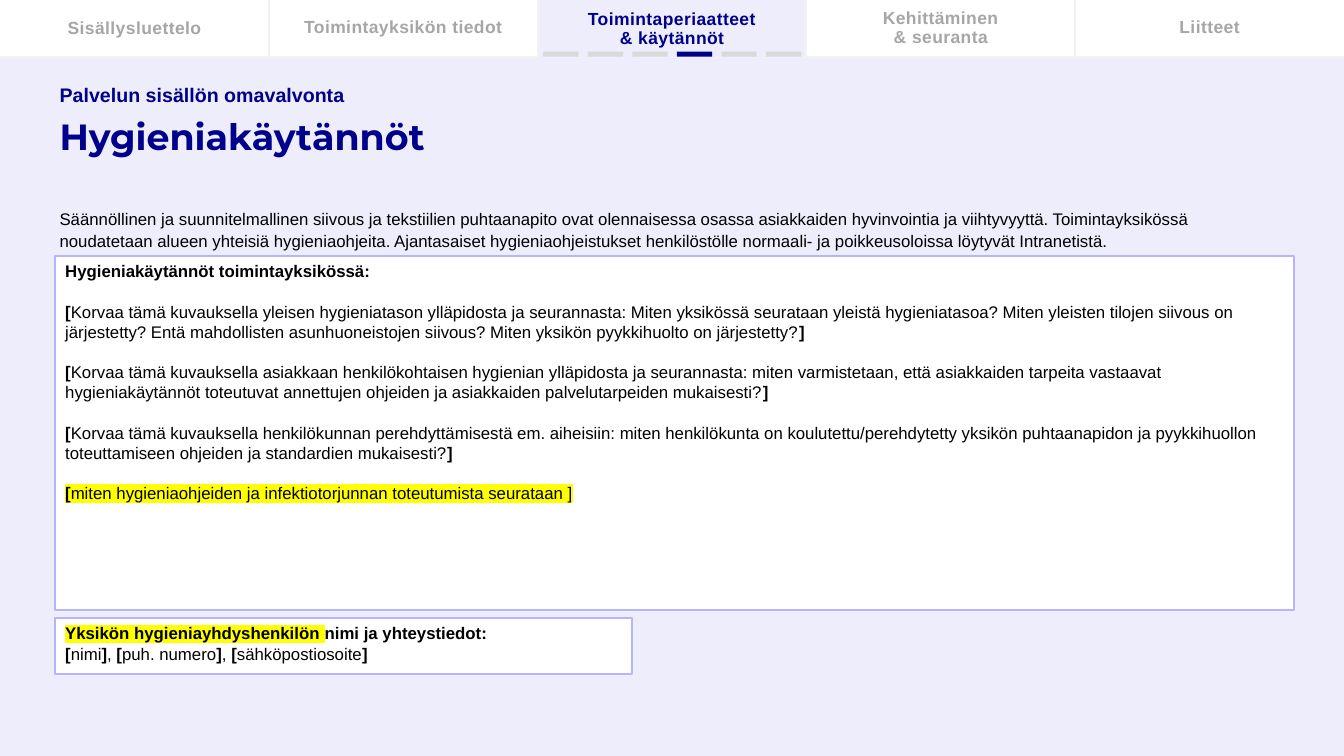
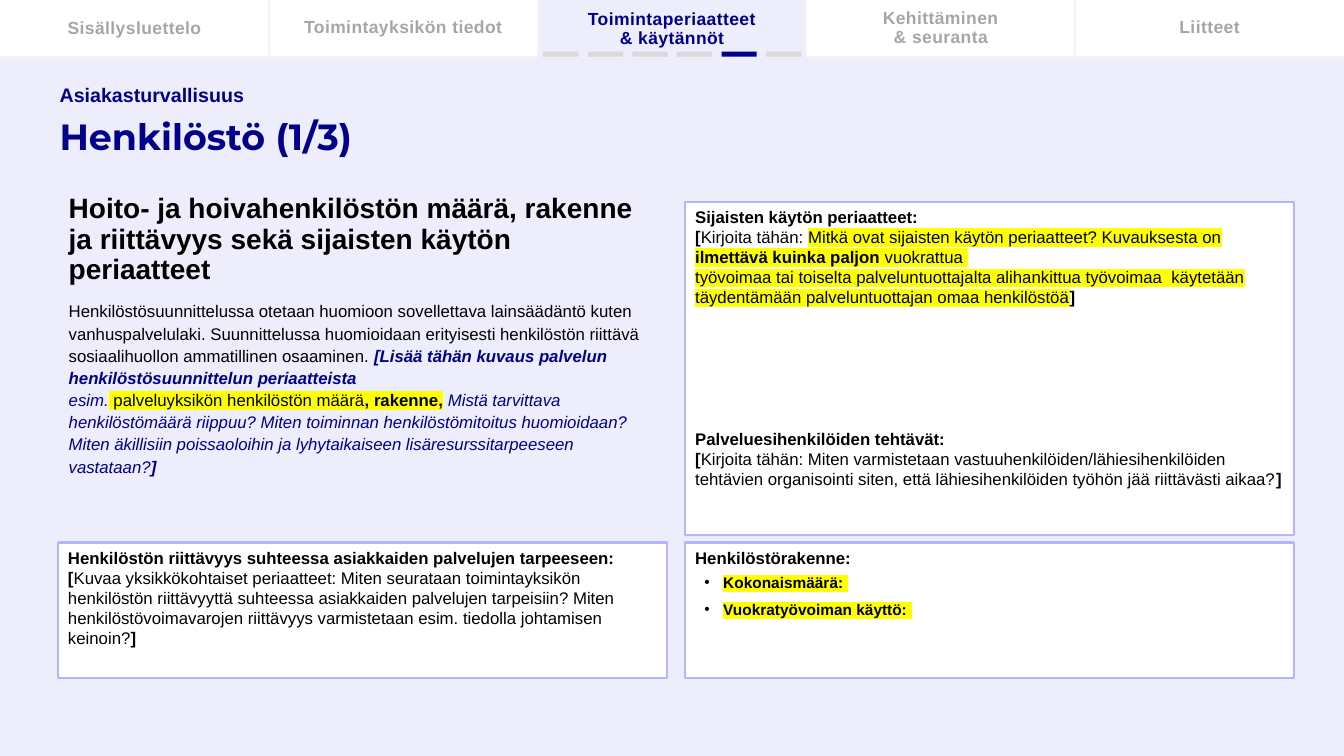
"""Build two self-monitoring plan pages with a shared tab header."""
from dataclasses import dataclass

from lxml import etree
from pptx import Presentation
from pptx.dml.color import RGBColor
from pptx.enum.shapes import MSO_CONNECTOR, MSO_SHAPE
from pptx.enum.text import MSO_ANCHOR, PP_ALIGN
from pptx.oxml.ns import qn
from pptx.util import Pt

RECTANGLE = MSO_SHAPE.RECTANGLE
STRAIGHT = MSO_CONNECTOR.STRAIGHT
TOP, MIDDLE = MSO_ANCHOR.TOP, MSO_ANCHOR.MIDDLE
LEFT, CENTER = PP_ALIGN.LEFT, PP_ALIGN.CENTER

COLORS = {
    "page": "EDEDFC", "white": "FFFFFF", "navy": "00008B", "black": "000000",
    "muted": "A6A6A6", "rule": "F2F2F2", "step": "D9D9D9",
    "border": "B5B5FF", "marker": "FFFF00",
}
BODY_FONT, TITLE_FONT = "Arial", "Montserrat"
PAGE_WIDTH, PAGE_HEIGHT = 960, 540
TAB_WIDTH, BAND_HEIGHT = 192, 41
ACTIVE_TAB = 2
STEP_COUNT, STEP_LEFT, STEP_PITCH = 6, 388, 31.84
BLANK_LINE = 14.4
NBSP = chr(160)


@dataclass(frozen=True)
class Span:
    """Text with one look."""
    text: str
    bold: bool = False
    italic: bool = False
    color: str = "black"
    marked: bool = False


@dataclass(frozen=True)
class Para:
    """A paragraph of spans with its spacing."""
    spans: list[Span]
    size: float = 12
    font: str = BODY_FONT
    line: float | None = None
    before: float = 0
    after: float = 0
    align: PP_ALIGN = LEFT
    bullet: bool = False
    tracking: float = 0


@dataclass(frozen=True)
class Area:
    """A rectangle in points."""
    left: float
    top: float
    width: float
    height: float

    def lengths(self) -> list[Pt]:
        """Return the four lengths."""
        return [Pt(v) for v in (self.left, self.top, self.width, self.height)]


@dataclass(frozen=True)
class Tab:
    """A header tab label and the height it is centred in."""
    label: str
    height: float


TABS = [
    Tab("Sisällysluettelo", 40),
    Tab("Toimintayksikön tiedot", 38.5),
    Tab("Toimintaperiaatteet\n& käytännöt", 41),
    Tab("Kehittäminen\n& seuranta", 39.5),
    Tab("Liitteet", 38.5),
]


def rgb(name: str) -> RGBColor:
    """Look up a named colour."""
    return RGBColor.from_string(COLORS[name])


def strong(text: str, **look) -> Span:
    """Return a bold span."""
    return Span(text, bold=True, **look)


def bracketed(text: str) -> list[Span]:
    """Return text between bold square brackets."""
    return [strong("["), Span(text), strong("]")]


def style_spans(paragraph, spans: list[Span]) -> None:
    """Set shared looks on the paragraph and differing ones on runs."""
    runs = list(paragraph.runs)
    for name in ("bold", "italic"):
        values = [getattr(span, name) for span in spans]
        if len(set(values)) == 1:
            setattr(paragraph.font, name, values[0])
        else:
            for run, value in zip(runs, values):
                setattr(run.font, name, value)
    if len({span.color for span in spans}) == 1:
        paragraph.font.color.rgb = rgb(spans[0].color)
    else:
        for run, span in zip(runs, spans):
            run.font.color.rgb = rgb(span.color)
    for run, span in zip(runs, spans):
        if span.marked:
            highlight = etree.SubElement(run._r.get_or_add_rPr(), qn("a:highlight"))
            etree.SubElement(highlight, qn("a:srgbClr"), val=COLORS["marker"])


def write(shape, paras: list[Para], anchor: MSO_ANCHOR = TOP) -> None:
    """Fill a shape with paragraphs."""
    frame = shape.text_frame
    frame.word_wrap = True
    frame.vertical_anchor = anchor
    for index, para in enumerate(paras):
        paragraph = frame.add_paragraph() if index else frame.paragraphs[0]
        if para.bullet:
            properties = paragraph._p.get_or_add_pPr()
            properties.set("marL", str(Pt(13.5)))
            properties.set("indent", str(Pt(-13.5)))
            etree.SubElement(properties, qn("a:buFont"), typeface=BODY_FONT)
            etree.SubElement(properties, qn("a:buChar"), char="•")
        if len(para.spans) == 1:
            paragraph.text = para.spans[0].text
        else:
            for span in para.spans:
                paragraph.add_run().text = span.text
        paragraph.alignment = para.align
        paragraph.space_before = Pt(para.before)
        paragraph.space_after = Pt(para.after)
        if para.line:
            paragraph.line_spacing = para.line
        paragraph.font.name = para.font
        paragraph.font.size = Pt(para.size)
        if para.tracking:
            for run in paragraph.runs:
                run._r.get_or_add_rPr().set("spc", str(round(para.tracking * 100)))
        looks = para.spans if len(para.spans) > 1 else para.spans * len(paragraph.runs)
        style_spans(paragraph, looks)


def add_text(page, area: Area, paras: list[Para], anchor: MSO_ANCHOR = TOP) -> None:
    """Add a text box."""
    write(page.shapes.add_textbox(*area.lengths()), paras, anchor)


def add_block(page, area: Area, fill: str, border: str | None = None):
    """Add a flat rectangle."""
    block = page.shapes.add_shape(RECTANGLE, *area.lengths())
    block.shadow.inherit = False
    block.fill.solid()
    block.fill.fore_color.rgb = rgb(fill)
    if border:
        block.line.color.rgb = rgb(border)
        block.line.width = Pt(1.5)
    else:
        block.line.fill.background()
    return block


def add_card(page, area: Area, paras: list[Para]) -> None:
    """Add a bordered white box with text."""
    write(add_block(page, area, "white", "border"), paras)


def add_rule(page, x1: float, y1: float, x2: float, y2: float) -> None:
    """Add a pale header line."""
    rule = page.shapes.add_connector(STRAIGHT, Pt(x1), Pt(y1), Pt(x2), Pt(y2))
    rule.line.color.rgb = rgb("rule")
    rule.line.width = Pt(1.5)
    etree.SubElement(rule._element.spPr, qn("a:effectLst"))


def add_header(page, step: int) -> None:
    """Draw the tabs and the progress steps."""
    add_block(page, Area(0, 0, PAGE_WIDTH, BAND_HEIGHT), "white")
    active_left = ACTIVE_TAB * TAB_WIDTH
    add_block(page, Area(active_left, 0, TAB_WIDTH, BAND_HEIGHT), "page")
    for index, tab in enumerate(TABS):
        color = "navy" if index == ACTIVE_TAB else "muted"
        label = Para([strong(tab.label, color=color)], 12.5, line=Pt(14),
                     align=CENTER, tracking=0.3)
        left = index * TAB_WIDTH
        add_text(page, Area(left, 0, TAB_WIDTH, tab.height), [label], MIDDLE)
        if index:
            add_rule(page, left, 0, left, BAND_HEIGHT)
    add_rule(page, 0, BAND_HEIGHT - 0.5, active_left, BAND_HEIGHT - 0.5)
    add_rule(page, active_left + TAB_WIDTH, BAND_HEIGHT, PAGE_WIDTH, BAND_HEIGHT)
    for index in range(STEP_COUNT):
        area = Area(STEP_LEFT + index * STEP_PITCH, 36.8, 25.2, 3.6)
        add_block(page, area, "navy" if index == step else "step")


def add_page(deck, section: str, title: str, step: int):
    """Add a page with header, section name and title."""
    page = deck.slides.add_slide(deck.slide_layouts[6])
    page.background.fill.solid()
    page.background.fill.fore_color.rgb = rgb("page")
    add_header(page, step)
    add_text(page, Area(35.5, 65, 889, 68.5),
             [Para([strong(title, color="navy")], 26, TITLE_FONT, 0.9)], MIDDLE)
    add_text(page, Area(35.5, 55, 400, 25),
             [Para([strong(section, color="navy")], 14)], MIDDLE)
    return page


def add_hygiene_page(deck) -> None:
    """Build the hygiene practices page."""
    page = add_page(deck, "Palvelun sisällön omavalvonta", "Hygieniakäytännöt", 3)
    add_text(page, Area(35.5, 144, 889, 40), [Para([Span(
        "Säännöllinen ja suunnitelmallinen siivous ja tekstiilien puhtaanapito ovat olennaisessa osassa asiakkaiden "
        "hyvinvointia ja viihtyvyyttä. Toimintayksikössä noudatetaan alueen yhteisiä hygieniaohjeita. Ajantasaiset "
        "hygieniaohjeistukset henkilöstölle normaali- ja poikkeusoloissa löytyvät Intranetistä.")], line=1.1)])
    prompts = [
        "Korvaa tämä kuvauksella yleisen hygieniatason ylläpidosta ja seurannasta: Miten yksikössä seurataan yleistä "
        "hygieniatasoa? Miten yleisten tilojen siivous on järjestetty? Entä mahdollisten asunhuoneistojen siivous? "
        "Miten yksikön pyykkihuolto on järjestetty?",
        "Korvaa tämä kuvauksella asiakkaan henkilökohtaisen hygienian ylläpidosta ja seurannasta: miten varmistetaan, "
        "että asiakkaiden tarpeita vastaavat hygieniakäytännöt toteutuvat annettujen ohjeiden ja asiakkaiden "
        "palvelutarpeiden mukaisesti?",
        "Korvaa tämä kuvauksella henkilökunnan perehdyttämisestä em. aiheisiin: miten henkilökunta on "
        "koulutettu/perehdytetty yksikön puhtaanapidon ja pyykkihuollon toteuttamiseen ohjeiden ja standardien "
        "mukaisesti?",
    ]
    follow_up = [strong("[", marked=True),
                 Span("miten hygieniaohjeiden ja infektiotorjunnan toteutumista seurataan ]", marked=True)]
    answers = [*map(bracketed, prompts), follow_up]
    add_card(page, Area(39.5, 183, 885, 252.5), [
        Para([strong("Hygieniakäytännöt toimintayksikössä:")]),
        *(Para(spans, before=BLANK_LINE) for spans in answers)])
    add_card(page, Area(39.5, 441.5, 412, 40), [
        Para([strong("Yksikön hygieniayhdyshenkilön ", marked=True), strong("nimi ja yhteystiedot:")]),
        Para([*bracketed("nimi"), Span(", "), *bracketed("puh. numero"), Span(", "),
              *bracketed("sähköpostiosoite")])])


def add_staff_page(deck) -> None:
    """Build the first staffing page."""
    page = add_page(deck, "Asiakasturvallisuus", "Henkilöstö (1/3)", 4)
    hint = {"italic": True, "color": "navy"}
    add_text(page, Area(42, 135.5, 423.5, 230), [
        Para([strong("Hoito- ja hoivahenkilöstön määrä, rakenne ja riittävyys sekä sijaisten käytön periaatteet")],
             20, line=0.9, after=2),
        Para([
            Span("Henkilöstösuunnittelussa otetaan huomioon sovellettava lainsäädäntö kuten vanhuspalvelulaki. "
                 "Suunnittelussa huomioidaan erityisesti henkilöstön riittävä sosiaalihuollon ammatillinen osaaminen. "),
            strong("[Lisää tähän kuvaus palvelun henkilöstösuunnittelun periaatteista ", **hint),
            Span("esim.", **hint),
            Span(NBSP, marked=True, **hint),
            Span(NBSP.join(["palveluyksikön", "henkilöstön", "määrä"]), marked=True),
            strong(f",{NBSP}rakenne,", marked=True),
            Span(f"{NBSP}Mistä tarvittava henkilöstömäärä riippuu? Miten toiminnan henkilöstömitoitus huomioidaan? "
                 "Miten äkillisiin poissaoloihin ja lyhytaikaiseen lisäresurssitarpeeseen vastataan?", **hint),
            strong("]", **hint)], line=1.1, before=7.9, after=1.8)])
    add_card(page, Area(489.5, 144, 435, 238.5), [
        Para([strong("Sijaisten käytön periaatteet:")]),
        Para([strong("["), Span("Kirjoita tähän: "),
              Span(f"Mitkä ovat sijaisten käytön periaatteet?{NBSP}Kuvauksesta on ", marked=True),
              strong("ilmettävä kuinka paljon", marked=True),
              Span(f" vuokrattua{NBSP}", marked=True)]),
        Para([Span(f"työvoimaa tai toiselta palveluntuottajalta alihankittua työvoimaa{NBSP} käytetään "
                   "täydentämään palveluntuottajan omaa henkilöstöä", marked=True), strong("]")]),
        Para([strong("Palveluesihenkilöiden tehtävät:")], before=6 * BLANK_LINE),
        Para(bracketed("Kirjoita tähän: Miten varmistetaan vastuuhenkilöiden/lähiesihenkilöiden tehtävien organisointi "
                       "siten, että lähiesihenkilöiden työhön jää riittävästi aikaa?"))])
    add_card(page, Area(489.5, 387.5, 435, 97), [Para([strong("Henkilöstörakenne:")])])
    add_text(page, Area(496, 406, 428, 50), [
        Para([strong(label, marked=True)], 11, before=6 if index else 0, bullet=True)
        for index, label in enumerate(["Kokonaismäärä: ", "Vuokratyövoiman käyttö: "])])
    add_card(page, Area(41.5, 387.5, 435, 97), [
        Para([strong("Henkilöstön riittävyys suhteessa asiakkaiden palvelujen tarpeeseen:")]),
        Para(bracketed("Kuvaa yksikkökohtaiset periaatteet: Miten seurataan toimintayksikön henkilöstön riittävyyttä "
                       "suhteessa asiakkaiden palvelujen tarpeisiin? Miten henkilöstövoimavarojen riittävyys "
                       "varmistetaan esim. tiedolla johtamisen keinoin?"))])


def main() -> None:
    """Build and save the deck."""
    deck = Presentation()
    deck.slide_width, deck.slide_height = Pt(PAGE_WIDTH), Pt(PAGE_HEIGHT)
    add_hygiene_page(deck)
    add_staff_page(deck)
    deck.save("out.pptx")


if __name__ == "__main__":
    main()
